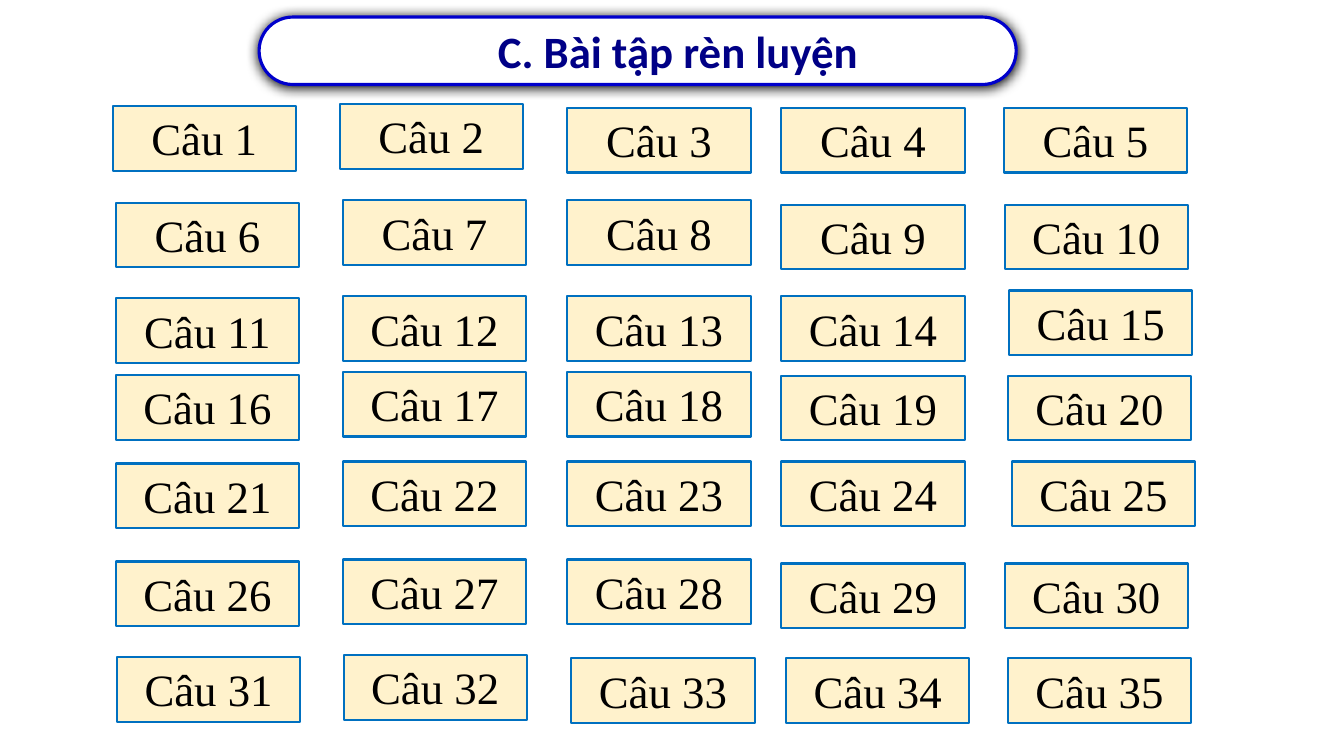
from lxml.etree import SubElement
from pptx import Presentation
from pptx.dml.color import RGBColor
from pptx.enum.shapes import MSO_SHAPE
from pptx.enum.text import MSO_ANCHOR, MSO_AUTO_SIZE, PP_ALIGN
from pptx.oxml.ns import qn
from pptx.util import Cm, Pt

WHITE = RGBColor(0xFF, 0xFF, 0xFF)
BLACK = RGBColor(0x00, 0x00, 0x00)
NAVY = RGBColor(0x00, 0x00, 0x86)
BLUE = RGBColor(0x00, 0x00, 0xCC)
SKY = RGBColor(0x00, 0x70, 0xC0)
CREAM = RGBColor(0xFF, 0xF2, 0xCC)

BANNER = (6.53, 0.43, 19.08, 1.7)
BUTTON_SIZE = (4.62, 1.63)
BUTTON_ROWS = [
    ((2.84, 8.56, 14.3, 19.69, 25.3), (2.67, 2.62, 2.72, 2.72, 2.72)),
    ((2.92, 8.64, 14.3, 19.69, 25.32), (5.11, 5.05, 5.05, 5.16, 5.16)),
    ((2.92, 8.64, 14.3, 19.69, 25.43), (7.52, 7.47, 7.47, 7.47, 7.32)),
    ((2.92, 8.64, 14.3, 19.69, 25.4), (9.45, 9.37, 9.37, 9.47, 9.47)),
    ((2.92, 8.64, 14.3, 19.69, 25.5), (11.68, 11.63, 11.63, 11.63, 11.63)),
    ((2.92, 8.64, 14.3, 19.69, 25.32), (14.15, 14.1, 14.1, 14.2, 14.2)),
    ((2.95, 8.66, 14.4, 19.81, 25.4), (16.56, 16.51, 16.59, 16.59, 16.59)),
]


def apply(target, values):
    for name, value in values.items():
        setattr(target, name, value)


class ExercisePage:
    title_font = {"name": "Calibri", "size": Pt(32), "bold": True}
    button_font = {"name": "Times New Roman", "size": Pt(32), "bold": False}

    def __init__(self, deck):
        self.page = deck.slides.add_slide(deck.slide_layouts[5])

    def paint(self, box, fill, line, width):
        box.fill.solid()
        box.fill.fore_color.rgb = fill
        box.line.color.rgb = line
        box.line.width = Pt(width)

    def add_text(self, box, text, font, color, frame):
        apply(box.text_frame, frame)
        para = box.text_frame.paragraphs[0]
        para.alignment = PP_ALIGN.CENTER
        span = para.add_run()
        span.text = text
        apply(span.font, font)
        span.font.color.rgb = color

    def banner(self, bounds):
        pill = self.page.shapes.add_shape(MSO_SHAPE.ROUNDED_RECTANGLE, *map(Cm, bounds))
        pill.adjustments[0] = 0.5
        pill.shadow.inherit = False
        self.paint(pill, WHITE, BLUE, 2.25)
        effects = pill.element.spPr.find(qn("a:effectLst"))
        shadow = SubElement(effects, qn("a:outerShdw"), blurRad=str(Pt(8.5)),
                            dist=str(Pt(1)), dir="5400000", algn="t", rotWithShape="0")
        SubElement(shadow, qn("a:srgbClr"), val="000000")
        return pill

    def title(self, text, bounds):
        pill = self.banner(bounds)
        box = self.page.shapes.title
        apply(box, dict(zip(("left", "top", "width", "height"), map(Cm, bounds))))
        box.element.addprevious(pill.element)
        self.add_text(box, text, self.title_font, NAVY, {
            "word_wrap": False, "auto_size": MSO_AUTO_SIZE.NONE,
            "vertical_anchor": MSO_ANCHOR.MIDDLE, "margin_left": Cm(2.29),
        })

    def button(self, text, left, top):
        box = self.page.shapes.add_textbox(*map(Cm, (left, top, *BUTTON_SIZE)))
        self.paint(box, CREAM, SKY, 1.5)
        self.add_text(box, text, self.button_font, BLACK, {
            "word_wrap": True, "auto_size": MSO_AUTO_SIZE.SHAPE_TO_FIT_TEXT,
            "vertical_anchor": MSO_ANCHOR.TOP,
        })


def main():
    deck = Presentation()
    apply(deck, {"slide_width": Cm(33.87), "slide_height": Cm(19.05)})
    exercises = ExercisePage(deck)
    exercises.title("C. Bài tập rèn luyện", BANNER)
    places = [place for lefts, tops in BUTTON_ROWS for place in zip(lefts, tops)]
    for number, (left, top) in enumerate(places, start=1):
        exercises.button(f"Câu {number}", left, top)
    deck.save("out.pptx")


if __name__ == "__main__":
    main()
